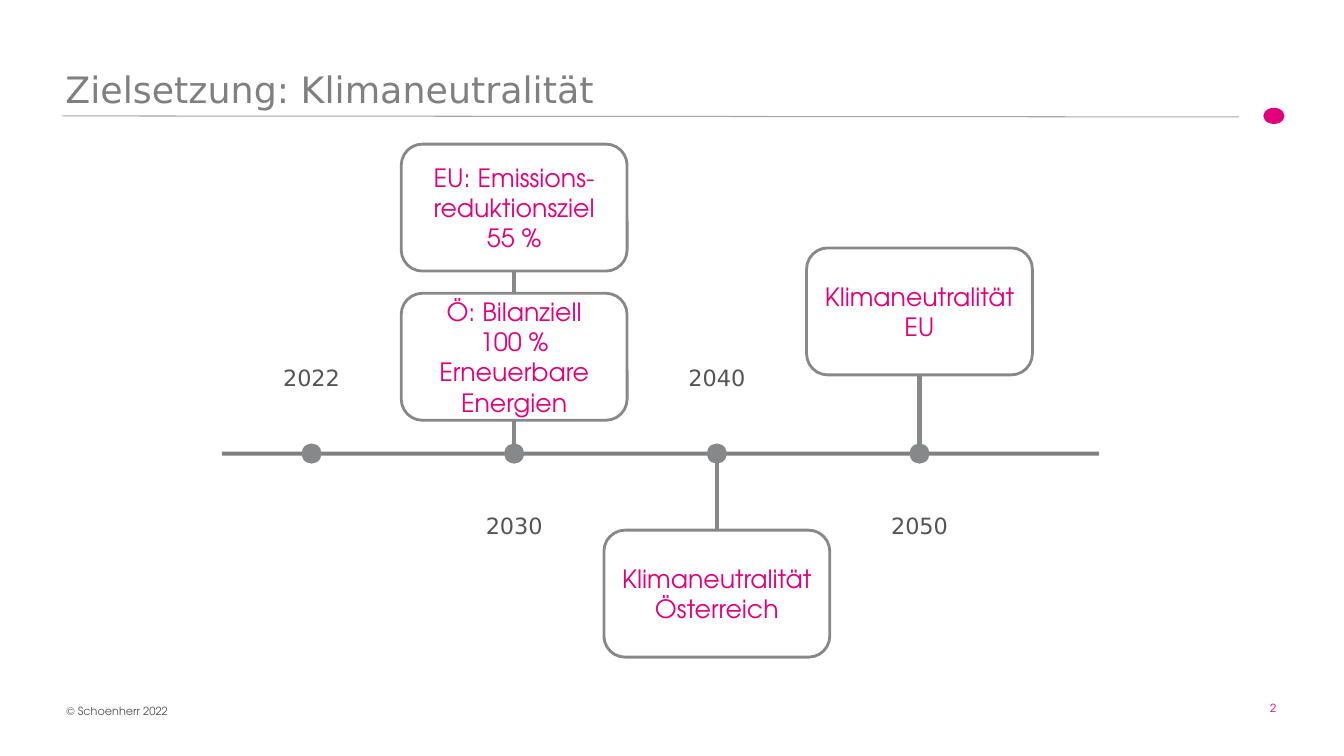
"""Build the climate neutrality timeline slide."""
import lxml.etree
import pptx
import pptx.dml.color
import pptx.enum.shapes
import pptx.enum.text
import pptx.oxml.ns
import pptx.util
from pptx.util import Inches

COLORS = {
    "pink": "E2007A",
    "title": "808080",
    "outline": "878889",
    "text": "535455",
    "rule": "A6A6A6",
}
HEADING_FONT = "DejaVu Sans"
BODY_FONT = "TeX Gyre Adventor"
ALIGN = pptx.enum.text.PP_ALIGN
ANCHOR = pptx.enum.text.MSO_ANCHOR
SHAPE = pptx.enum.shapes.MSO_SHAPE

AXIS_Y = 4.5
FIRST_X = 3.09
STEP_X = 2.01
DOT_SIZE = 0.2
CARD_WIDTH = 2.24
CARD_HEIGHT = 1.26
LABEL_WIDTH = 1.92
LABEL_HEIGHT = 1.96
LABEL_ABOVE_TOP = 2.04
LABEL_BELOW_TOP = 4.99

MILESTONES = [
    ("2022", LABEL_ABOVE_TOP, ANCHOR.BOTTOM),
    ("2030", LABEL_BELOW_TOP, ANCHOR.TOP),
    ("2040", LABEL_ABOVE_TOP, ANCHOR.BOTTOM),
    ("2050", LABEL_BELOW_TOP, ANCHOR.TOP),
]
CARDS = [
    (1, 1.43, "EU: Emissions-reduktionsziel 55 %"),
    (1, 2.91, "Ö: Bilanziell\n100 % Erneuerbare Energien"),
    (2, 5.26, "Klimaneutralität Österreich"),
    (3, 2.46, "Klimaneutralität EU"),
]
STEMS = [
    (1, 1.43 + CARD_HEIGHT, 2.91),
    (1, 2.91 + CARD_HEIGHT, AXIS_Y),
    (2, AXIS_Y, 5.26),
    (3, 2.46 + CARD_HEIGHT, AXIS_Y),
]


def rgb(name):
    """Return the named colour."""
    return pptx.dml.color.RGBColor.from_string(COLORS[name])


def milestone_x(index):
    """Return the horizontal centre of a milestone."""
    return FIRST_X + STEP_X * index


def write_text(shape, text, size, font, color, align=ALIGN.LEFT, anchor=ANCHOR.TOP):
    """Fill a shape with uniformly formatted text."""
    frame = shape.text_frame
    frame.text = text
    frame.word_wrap = True
    frame.vertical_anchor = anchor
    for paragraph in frame.paragraphs:
        paragraph.alignment = align
        for run in paragraph.runs:
            run.font.size = pptx.util.Pt(size)
            run.font.name = font
            run.font.color.rgb = rgb(color)


def add_text(slide, left, top, width, height, *style):
    """Add a text box and return it."""
    box = slide.shapes.add_textbox(Inches(left), Inches(top), Inches(width), Inches(height))
    write_text(box, *style)
    return box


def add_filled(slide, kind, left, top, width, height, color):
    """Add a filled shape without an outline."""
    shape = slide.shapes.add_shape(
        kind, Inches(left), Inches(top), Inches(width), Inches(height))
    shape.shadow.inherit = False
    shape.fill.solid()
    shape.fill.fore_color.rgb = rgb(color)
    shape.line.fill.background()


def add_line(slide, start_x, start_y, end_x, end_y, color, weight):
    """Add a straight line without a shadow."""
    line = slide.shapes.add_connector(
        pptx.enum.shapes.MSO_CONNECTOR.STRAIGHT,
        Inches(start_x), Inches(start_y), Inches(end_x), Inches(end_y))
    line.line.color.rgb = rgb(color)
    line.line.width = pptx.util.Pt(weight)
    lxml.etree.SubElement(line._element.spPr, pptx.oxml.ns.qn("a:effectLst"))


def add_milestone(slide, index, year, label_top, anchor):
    """Add a year label and its dot on the axis."""
    center = milestone_x(index)
    label = add_text(
        slide, center - LABEL_WIDTH / 2, label_top, LABEL_WIDTH, LABEL_HEIGHT,
        year, 16, HEADING_FONT, "text", ALIGN.CENTER, anchor)
    frame = label.text_frame
    frame.margin_left = frame.margin_right = Inches(0.12)
    frame.margin_top = frame.margin_bottom = Inches(0.12)
    frame.paragraphs[0].line_spacing = 0.9
    add_filled(slide, SHAPE.OVAL, center - DOT_SIZE / 2, AXIS_Y - DOT_SIZE / 2,
               DOT_SIZE, DOT_SIZE, "outline")


def add_card(slide, index, top, text):
    """Add an outlined goal card centred on a milestone."""
    card = slide.shapes.add_shape(
        SHAPE.ROUNDED_RECTANGLE, Inches(milestone_x(index) - CARD_WIDTH / 2),
        Inches(top), Inches(CARD_WIDTH), Inches(CARD_HEIGHT))
    card.shadow.inherit = False
    card.fill.background()
    card.line.color.rgb = rgb("outline")
    card.line.width = pptx.util.Pt(2)
    write_text(card, text, 18, BODY_FONT, "pink", ALIGN.CENTER, ANCHOR.MIDDLE)


def add_frame(slide):
    """Add the title, header rule and footer."""
    add_text(slide, 12.5, 6.91, 0.41, 0.24, "2", 8, BODY_FONT, "pink")
    add_line(slide, 0.62, 1.15, 12.29, 1.16, "rule", 0.75)
    add_filled(slide, SHAPE.OVAL, 12.53, 1.07, 0.21, 0.16, "pink")
    add_text(slide, 0.56, 6.94, 2.94, 0.24, "© Schoenherr 2022", 8, BODY_FONT, "text")
    add_text(slide, 0.55, 0.6, 11.81, 0.55, "Zielsetzung: Klimaneutralität",
             26, HEADING_FONT, "title", ALIGN.LEFT, ANCHOR.BOTTOM)


def main():
    """Build and save the slide."""
    presentation = pptx.Presentation()
    presentation.slide_width = Inches(13.33)
    presentation.slide_height = Inches(7.5)
    slide = presentation.slides.add_slide(presentation.slide_layouts[6])
    add_frame(slide)
    add_filled(slide, SHAPE.RECTANGLE, 2.2, AXIS_Y - 0.02, 8.7, 0.04, "title")
    for index, milestone in enumerate(MILESTONES):
        add_milestone(slide, index, *milestone)
    for index, top, bottom in STEMS:
        add_line(slide, milestone_x(index), top, milestone_x(index), bottom, "outline", 3)
    for card in CARDS:
        add_card(slide, *card)
    presentation.save("out.pptx")


if __name__ == "__main__":
    main()
